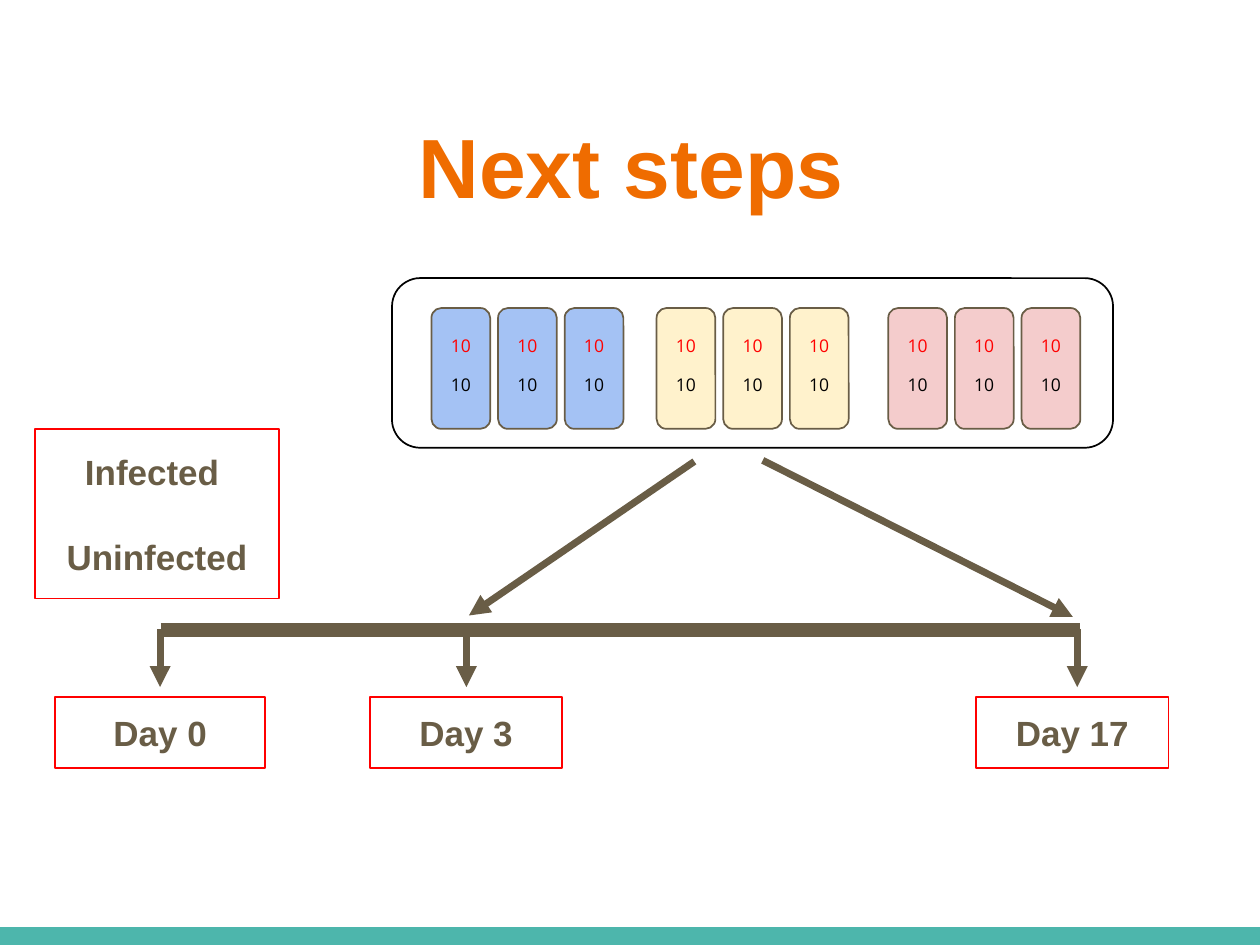
"""Build the "Next steps" slide: vial groups feeding an infection timeline."""
from dataclasses import dataclass
from typing import Any

import lxml.etree
import pptx
import pptx.dml.color
import pptx.enum.shapes
import pptx.enum.text
import pptx.oxml.ns
import pptx.slide
import pptx.text.text
import pptx.util

Pt = pptx.util.Pt
SHAPES = pptx.enum.shapes.MSO_SHAPE
ANCHOR = pptx.enum.text.MSO_ANCHOR

COLOURS = {
    "orange": "EF6C00", "brown": "695D46", "red": "FF0000", "black": "000000",
    "teal": "4DB6AC", "blue": "A4C2F4", "cream": "FFF2CC", "pink": "F4CCCC",
}
TITLE_FONT = {"name": "Arial", "size": Pt(36), "bold": True}
LABEL_FONT = {"name": "Arial", "size": Pt(15), "bold": True}
COUNT_FONT = {"name": "Open Sans", "size": Pt(7.5), "bold": False}
TITLE_FRAME = {
    "auto_size": pptx.enum.text.MSO_AUTO_SIZE.NONE, "word_wrap": True,
    "vertical_anchor": ANCHOR.TOP, "margin_left": Pt(5), "margin_right": Pt(5),
    "margin_top": Pt(9.3), "margin_bottom": Pt(0),
}
LABEL_FRAME = {
    "word_wrap": True, "vertical_anchor": ANCHOR.MIDDLE, "margin_left": Pt(5),
    "margin_right": Pt(5), "margin_top": Pt(5), "margin_bottom": Pt(5),
}
COUNT_FRAME = LABEL_FRAME | {"margin_top": Pt(0), "margin_bottom": Pt(3)}


@dataclass(frozen=True)
class Line:
    """One line of text and its colour."""
    text: str
    colour: str = "brown"


@dataclass(frozen=True)
class Box:
    """A shape with its place, outline, fill and text, in points."""
    left: float
    top: float
    width: float
    height: float
    outline: str | None = "red"
    fill: str | None = None
    kind: Any = SHAPES.RECTANGLE
    lines: tuple[Line, ...] = ()
    font: dict[str, Any] | None = None
    frame: dict[str, Any] | None = None
    gap: float = 0


@dataclass(frozen=True)
class Stroke:
    """A straight line between two points, with or without an arrowhead."""
    start: tuple[float, float]
    end: tuple[float, float]
    weight: float = 3
    arrow: bool = True


def rgb(name: str) -> pptx.dml.color.RGBColor:
    """Return the named colour."""
    return pptx.dml.color.RGBColor.from_string(COLOURS[name])


def apply(target: Any, values: dict[str, Any]) -> None:
    """Set each format value on the target."""
    for key, value in values.items():
        setattr(target, key, value)


def write(frame: pptx.text.text.TextFrame, lines: tuple[Line, ...],
          font: dict[str, Any], layout: dict[str, Any], gap: float = 0) -> None:
    """Write centred lines, with a gap before each line but the first."""
    apply(frame, layout)
    for index, line in enumerate(lines):
        paragraph = frame.add_paragraph() if index else frame.paragraphs[0]
        paragraph.alignment = pptx.enum.text.PP_ALIGN.CENTER
        paragraph.space_before = Pt(gap if index else 0)
        run = paragraph.add_run()
        run.text = line.text
        apply(run.font, font)
        run.font.color.rgb = rgb(line.colour)


def draw_box(slide: pptx.slide.Slide, box: Box) -> None:
    """Draw a box and its text."""
    shape = slide.shapes.add_shape(
        box.kind, Pt(box.left), Pt(box.top), Pt(box.width), Pt(box.height))
    shape.shadow.inherit = False
    if box.fill:
        shape.fill.solid()
        shape.fill.fore_color.rgb = rgb(box.fill)
    else:
        shape.fill.background()
    if box.outline:
        shape.line.color.rgb = rgb(box.outline)
        shape.line.width = Pt(0.75)
    else:
        shape.line.fill.background()
    if box.lines:
        write(shape.text_frame, box.lines, box.font or LABEL_FONT,
              box.frame or LABEL_FRAME, box.gap)


def draw_stroke(slide: pptx.slide.Slide, stroke: Stroke) -> None:
    """Draw a brown line or arrow."""
    connector = slide.shapes.add_connector(
        pptx.enum.shapes.MSO_CONNECTOR.STRAIGHT,
        *(Pt(value) for value in stroke.start + stroke.end))
    connector.line.color.rgb = rgb("brown")
    connector.line.width = Pt(stroke.weight)
    qn = pptx.oxml.ns.qn
    properties = connector.element.spPr
    if stroke.arrow:
        outline = properties.find(qn("a:ln"))
        lxml.etree.SubElement(outline, qn("a:tailEnd"), type="triangle")
    lxml.etree.SubElement(properties, qn("a:effectLst"))


def main() -> None:
    """Build and save the slide."""
    deck = pptx.Presentation()
    apply(deck, {"slide_width": Pt(540), "slide_height": Pt(405)})
    slide = deck.slides.add_slide(deck.slide_layouts[5])

    title = slide.shapes.title
    apply(title, {"left": Pt(18.7), "top": Pt(39.6),
                  "width": Pt(503.3), "height": Pt(41.8)})
    write(title.text_frame, (Line("Next steps", "orange"),), TITLE_FONT, TITLE_FRAME)

    footer_band = Box(0, 397.4, 540, 7.6, outline=None, fill="teal")
    rack = Box(168, 119.2, 309, 72.7, outline="black", kind=SHAPES.ROUNDED_RECTANGLE)
    legend = Box(15, 184, 104.6, 72.6, gap=18.75,
                 lines=(Line("Infected "), Line("Uninfected")))
    vial_groups = {"blue": 184.9, "cream": 281.4, "pink": 380.7}
    counts = (Line("10", "red"), Line("10", "black"))
    vials = [
        Box(left + 28.55 * place, 132, 25.2, 51.8, outline="brown", fill=fill,
            kind=SHAPES.ROUNDED_RECTANGLE, lines=counts, font=COUNT_FONT,
            frame=COUNT_FRAME, gap=7.8)
        for fill, left in vial_groups.items() for place in range(3)
    ]
    days = [
        Box(left, 298.7, width, 30.4, lines=(Line(day),))
        for day, left, width in (
            ("Day 0", 23.6, 90), ("Day 3", 158.5, 82.5), ("Day 17", 418.3, 82.5))
    ]
    for box in (footer_band, rack, legend, *vials, *days):
        draw_box(slide, box)

    timeline = Stroke((69, 270), (463, 270), weight=6, arrow=False)
    day_arrows = [Stroke((x, 269.5), (x, 294.5)) for x in (68.6, 199.9, 461.7)]
    sampling_arrows = [Stroke((297.6, 197.8), (201, 263.8)),
                       Stroke((326.9, 197.3), (459.8, 264.4))]
    for stroke in (timeline, *day_arrows, *sampling_arrows):
        draw_stroke(slide, stroke)

    deck.save("out.pptx")


if __name__ == "__main__":
    main()
